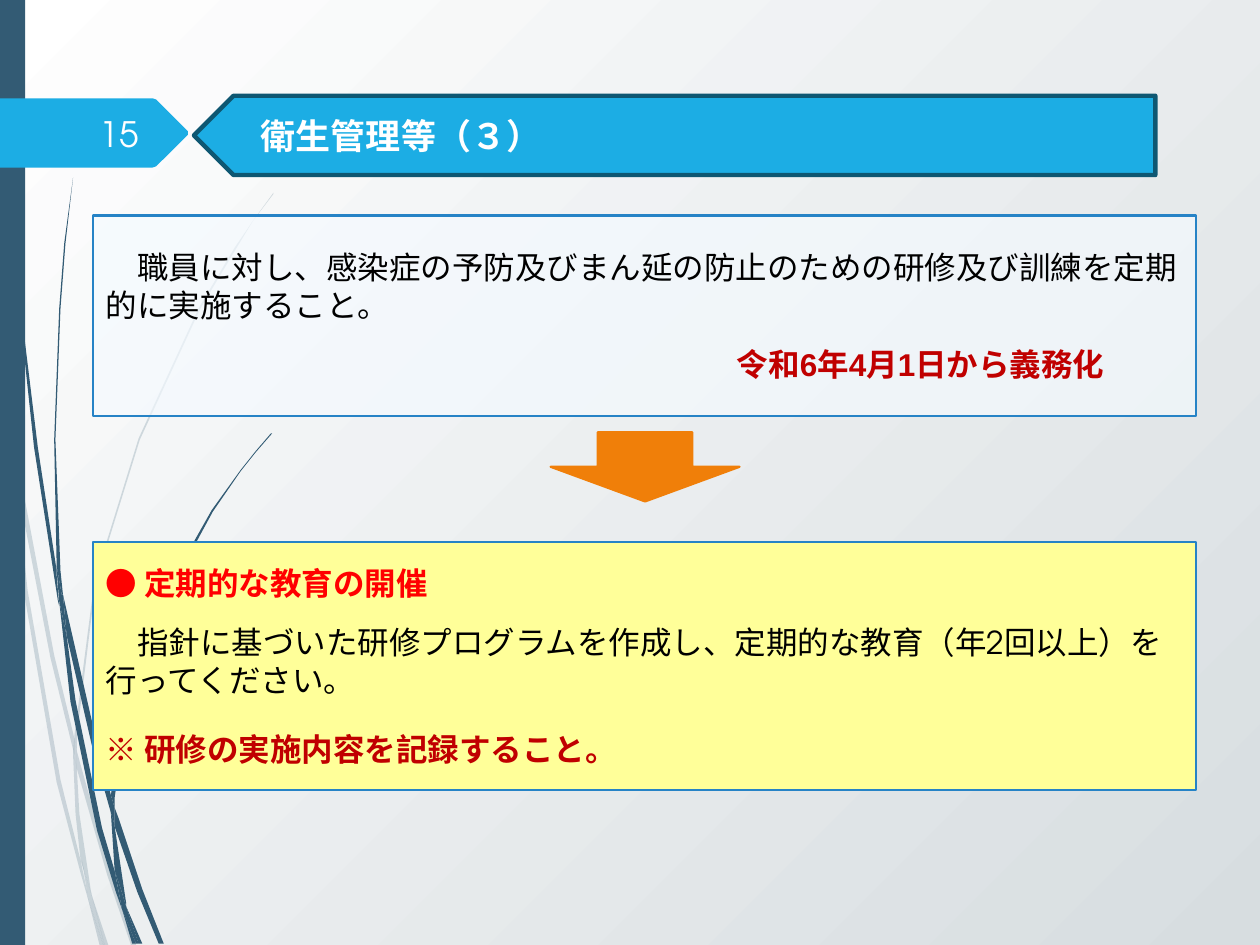
from lxml.etree import SubElement
from pptx import Presentation
from pptx.dml.color import RGBColor
from pptx.enum.shapes import MSO_SHAPE
from pptx.enum.text import MSO_ANCHOR, MSO_AUTO_SIZE, PP_ALIGN
from pptx.oxml.ns import qn
from pptx.util import Inches, Pt

NAVY = RGBColor(0x33, 0x5B, 0x74)
SKY = RGBColor(0x1C, 0xAD, 0xE4)
DEEP = RGBColor(0x0E, 0x57, 0x72)
BLUE = RGBColor(0x26, 0x83, 0xC6)
PALE = RGBColor(0xF4, 0xFA, 0xFF)
YELLOW = RGBColor(0xFF, 0xFF, 0x99)
ORANGE = RGBColor(0xF0, 0x7F, 0x09)
RED = RGBColor(0xFF, 0, 0)
CRIMSON = RGBColor(0xC0, 0, 0)
BLACK = RGBColor(0, 0, 0)
WHITE = RGBColor(0xFF, 0xFF, 0xFF)
SILVER = RGBColor(0xD7, 0xDD, 0xE0)
ROUND, ARIAL, JAPANESE = "TeX Gyre Adventor", "Arial", "Noto Sans CJK JP"

# Blades of grass, as outline corners in inches
FAINT_BLADES = [
    [(.08, 3.5), (.06, 3.22), (0, 2.82), (0, 2.99), (.07, 3.44)],
    [(.4, 5.22), (.59, 5.99), (.59, 5.86), (.43, 5.2), (.1, 3.45), (.12, 3.76)],
    [(.64, 6.07), (.61, 5.96), (.61, 6.1), (.85, 6.94), (1.04, 7.5), (1.08, 7.5),
     (.88, 6.92)],
    [(.83, 7.5), (.86, 7.5), (.73, 7.11)],
    [(.64, 6.83), (.48, 6.19), (.22, 4.69), (.12, 3.76), (.08, 3.5), (.19, 4.7),
     (.45, 6.21), (.64, 6.93), (.7, 7.14), (.69, 7.07)],
    [(.58, 5.99), (.6, 6.46), (.64, 6.83), (.67, 6.92), (.73, 7.11), (.72, 7.06),
     (.63, 6.46), (.61, 6.1), (.61, 6.08)],
    [(.61, 5.84), (.76, 4.62), (1.11, 3.49), (1.59, 2.45), (1.87, 1.98), (2.01, 1.75),
     (2.17, 1.54), (2.17, 1.53), (2.01, 1.75), (1.86, 1.97), (1.58, 2.44), (1.1, 3.48),
     (.75, 4.61), (.59, 5.84), (.59, 5.86), (.61, 5.96)],
    [(.7, 7.14), (.79, 7.5), (.82, 7.5)],
    [(.61, 6.08), (.61, 6.1), (.61, 5.96), (.59, 5.86), (.58, 5.99)],
    [(.67, 6.92), (.65, 6.83), (.69, 7.07), (.7, 7.14), (.82, 7.5), (.83, 7.5),
     (.73, 7.11)],
]
DARK_BLADES = [
    [(.05, 1.1), (.14, 2.33), (.27, 3.55), (.46, 4.77), (.47, 4.81), (.45, 4.57),
     (.45, 4.53), (.3, 3.55), (.15, 2.32), (.06, 1.09), (.04, .48), (.03, 0), (.02, 0),
     (.03, .48)],
    [(.73, 5.92), (.88, 6.45), (.88, 6.33), (.88, 6.31), (.77, 5.9), (.5, 4.72),
     (.53, 5.05)],
    [(.94, 6.49), (.91, 6.41), (.91, 6.56), (1.09, 7.08), (1.26, 7.49), (1.3, 7.49),
     (1.13, 7.06)],
    [(.91, 6.91), (.81, 6.57), (.6, 5.56), (.53, 5.05), (.47, 4.77), (.56, 5.57),
     (.77, 6.59), (.92, 7.08), (.97, 7.22), (.96, 7.17)],
    [(.5, 4.72), (.48, 4.53), (.44, 3.49), (.48, 2.45), (.52, 1.93), (.58, 1.41),
     (.51, 1.93), (.47, 2.45), (.43, 3.49), (.45, 4.49), (.49, 4.72)],
    [(1.1, 7.49), (1.13, 7.49), (1, 7.19)],
    [(.47, 4.77), (.53, 5.05), (.5, 4.72), (.49, 4.72), (.45, 4.49), (.45, 4.53)],
    [(.91, 6.33), (1.03, 5.52), (1.31, 4.76), (1.69, 4.06), (1.91, 3.74), (2.03, 3.59),
     (2.16, 3.44), (2.15, 3.44), (2.03, 3.58), (1.91, 3.73), (1.68, 4.05), (1.29, 4.74),
     (1.01, 5.51), (.88, 6.31), (.91, 6.41)],
    [(.97, 7.22), (1.05, 7.49), (1.08, 7.49)],
    [(.88, 6.45), (.91, 6.91), (.96, 7.06), (1, 7.19), (1, 7.16), (.91, 6.56),
     (.9, 6.51)],
    [(.88, 6.31), (.88, 6.45), (.9, 6.51), (.91, 6.56), (.91, 6.41)],
    [(.96, 7.06), (.91, 6.91), (.96, 7.17), (.97, 7.22), (1.08, 7.49), (1.1, 7.49),
     (1, 7.19)],
]
NUMBER_TAB = [(0, .78), (1.21, .78), (1.24, .79), (1.49, 1.04), (1.49, 1.07),
              (1.24, 1.32), (1.21, 1.33), (0, 1.33)]

# Paragraph: (space before, space after, left margin, first-line indent, runs)
# Run: (text, font, colour, bold)
RULE = [
    (6, 6, 0, .25, [("職員に対し、感染症の予防及びまん延の防止のための研修及び訓練を定期的に実施すること。",
                     ROUND, BLACK, False)]),
    (6, 6, 5.01, 0, [("令和6年4月1日から義務化", ARIAL, CRIMSON, True)]),
]
ACTION = [
    (12, 6, 0, 0, [("● 定期的な教育の開催", ROUND, RED, True)]),
    (6, 12, 0, .25, [("指針に基づいた研修プログラムを作成し、定期的な教育（年2回以上）を行ってください。",
                      ROUND, BLACK, False)]),
    (6, 12, 0, 0, [("※ ", ROUND, CRIMSON, True),
                   ("研修の実施内容を記録すること。", ARIAL, CRIMSON, True)]),
]
TITLE = [(0, 0, 0, 0, [("衛生管理等", JAPANESE, WHITE, True), ("（３）", ROUND, WHITE, True)])]
PAGE_NUMBER = [(0, 0, 0, 0, [("15", ROUND, WHITE, False)])]


def paint(shape, fill, line=None, width=1.25, opacity=100):
    shape.shadow.inherit = False
    shape.fill.solid()
    shape.fill.fore_color.rgb = fill
    if opacity < 100:
        color = shape._element.spPr.find(qn("a:solidFill"))[0]
        SubElement(color, qn("a:alpha"), val=str(opacity * 1000))
    if line is None:
        shape.line.fill.background()
    else:
        shape.line.color.rgb = line
        shape.line.width = Pt(width)


def add_block(page, kind, place, *style, **options):
    block = page.shapes.add_shape(kind, *map(Inches, place))
    paint(block, *style, **options)
    return block


def add_outline(page, corners, fill, opacity=100):
    points = [(Inches(x), Inches(y)) for x, y in corners]
    builder = page.shapes.build_freeform(*points[0])
    builder.add_line_segments(points[1:], close=True)
    paint(builder.convert_to_shape(), fill, opacity=opacity)


def write(box, paragraphs, size, align=PP_ALIGN.LEFT):
    frame = box.text_frame
    frame.word_wrap = True
    frame.auto_size = MSO_AUTO_SIZE.NONE
    frame.vertical_anchor = MSO_ANCHOR.MIDDLE
    for index, (before, after, margin, indent, runs) in enumerate(paragraphs):
        para = frame.add_paragraph() if index else frame.paragraphs[0]
        para.alignment = align
        para.space_before, para.space_after = Pt(before), Pt(after)
        properties = para._p.get_or_add_pPr()
        properties.set("marL", str(Inches(margin)))
        properties.set("indent", str(Inches(indent)))
        for text, font, color, bold in runs:
            span = para.add_run()
            span.text = text
            span.font.name, span.font.size = font, Pt(size)
            span.font.bold, span.font.color.rgb = bold, color
            SubElement(span._r.get_or_add_rPr(), qn("a:ea"), typeface=JAPANESE)


def main():
    deck = Presentation()
    deck.slide_width, deck.slide_height = Inches(10), Inches(7.5)
    page = deck.slides.add_slide(deck.slide_layouts[5])
    backdrop = page.background.fill
    backdrop.gradient()
    backdrop.gradient_angle = 315
    for stop, color in zip(backdrop.gradient_stops, (WHITE, SILVER)):
        stop.color.rgb = color

    for blades, opacity in ((FAINT_BLADES, 20), (DARK_BLADES, 100)):
        for blade in blades:
            add_outline(page, blade, NAVY, opacity)
    add_block(page, MSO_SHAPE.RECTANGLE, (0, 0, .2, 7.5), NAVY)
    add_outline(page, NUMBER_TAB, SKY)
    number = page.shapes.add_textbox(*map(Inches, (.56, .86, .64, .4)))
    write(number, PAGE_NUMBER, 20, PP_ALIGN.RIGHT)

    action = add_block(page, MSO_SHAPE.RECTANGLE, (.74, 4.3, 8.75, 1.97), YELLOW, BLUE)
    write(action, ACTION, 18)
    add_block(page, MSO_SHAPE.DOWN_ARROW, (4.37, 3.43, 1.5, .55), ORANGE, ORANGE)

    banner = add_block(page, MSO_SHAPE.PENTAGON, (1.54, .76, 7.63, .63), SKY, DEEP, 2.5)
    banner._element.spPr.xfrm.set("flipH", "1")
    title = page.shapes.title
    title.left, title.top, title.width, title.height = map(Inches, (1.97, .76, 7.1, .63))
    write(title, TITLE, 20)
    banner._element.addnext(title._element)

    rule = add_block(page, MSO_SHAPE.RECTANGLE, (.74, 1.71, 8.75, 1.59), PALE, BLUE, opacity=65)
    write(rule, RULE, 18)
    deck.save("out.pptx")


if __name__ == "__main__":
    main()
